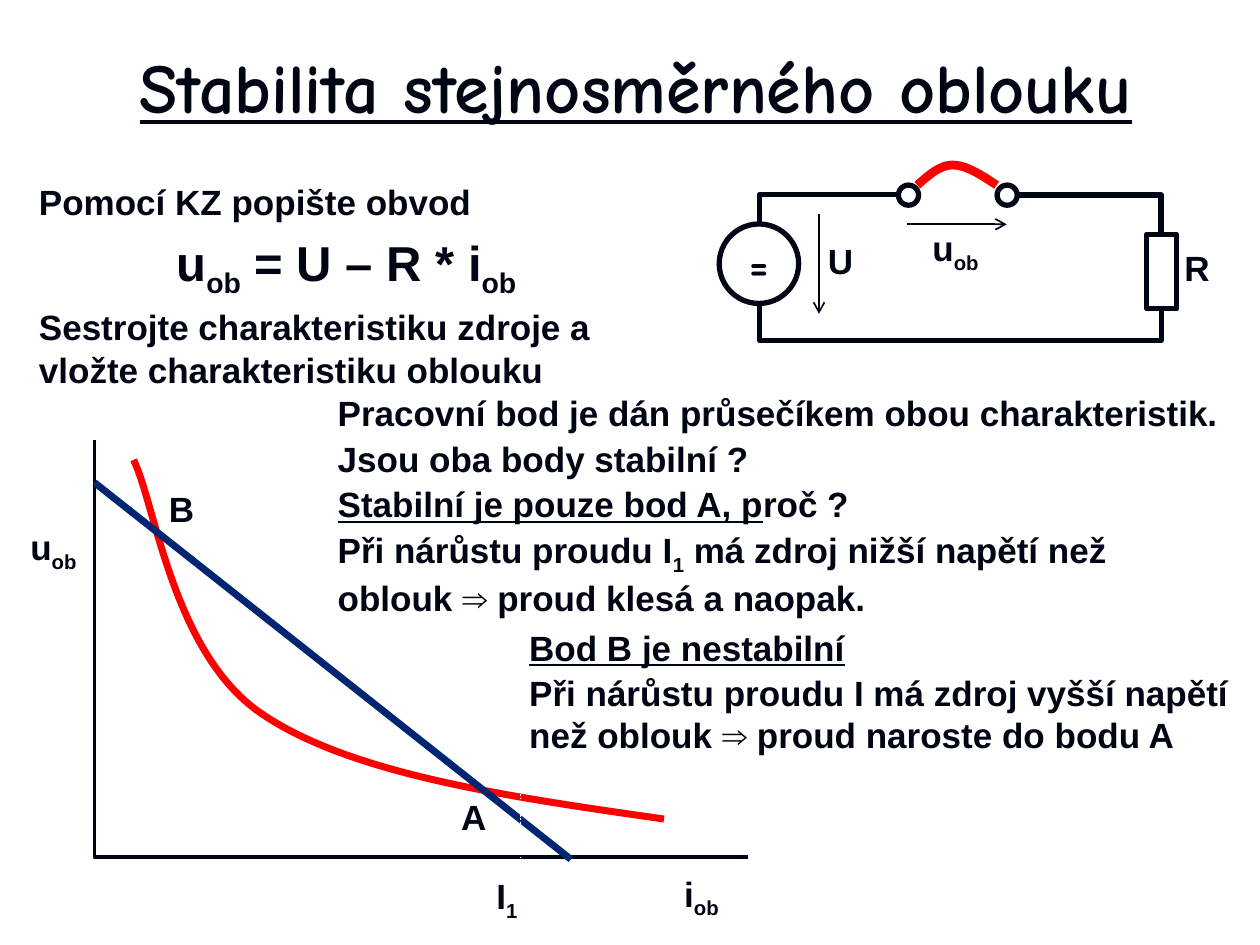
from lxml.etree import SubElement
from pptx import Presentation
from pptx.dml.color import RGBColor
from pptx.enum.dml import MSO_LINE
from pptx.enum.shapes import MSO_CONNECTOR, MSO_SHAPE
from pptx.enum.text import MSO_ANCHOR, MSO_AUTO_SIZE, PP_ALIGN
from pptx.oxml.ns import qn
from pptx.util import Pt

COLORS = {"ink": "000514", "arc": "FF0000", "source": "002673", "paper": "FFFFFF"}
BODY_FONT, TITLE_FONT = "Arial", "Comic Neue"


def style_line(line, color, width):
    """Set the colour and width of a line."""
    line.color.rgb = RGBColor.from_string(COLORS[color])
    line.width = Pt(width)


def add_run(paragraph, text, style="", size=20, font=BODY_FONT):
    """Add a bold run, optionally underlined or subscript."""
    run = paragraph.add_run()
    run.text = text
    run.font.name, run.font.size, run.font.bold = font, Pt(size), True
    run.font.color.rgb = RGBColor.from_string(COLORS["ink"])
    if style == "underline":
        run.font.underline = True
    if style == "sub":
        run.font._element.set("baseline", "-25000")


def add_text(shapes, box, paragraphs, spacing=0, wrap=True):
    """Add a text box; each paragraph is a list of (text, style) runs."""
    frame = shapes.add_textbox(*map(Pt, box)).text_frame
    frame.word_wrap = wrap
    frame.auto_size = MSO_AUTO_SIZE.SHAPE_TO_FIT_TEXT
    frame.margin_left = frame.margin_right = Pt(2.9)
    frame.margin_top = frame.margin_bottom = Pt(2.9)
    for index, runs in enumerate(paragraphs):
        paragraph = frame.add_paragraph() if index else frame.paragraphs[0]
        if index:
            paragraph.space_before = Pt(spacing)
        for run in runs:
            add_run(paragraph, *run)
    return frame


def add_outline(shapes, preset, box):
    """Add an unfilled circuit symbol."""
    symbol = shapes.add_shape(preset, *map(Pt, box))
    symbol.shadow.inherit = False
    symbol.fill.background()
    style_line(symbol.line, "ink", 3)
    return symbol


def add_line(shapes, start, end, color="ink", width=1, arrow=False, kind=MSO_CONNECTOR.STRAIGHT):
    """Add a connector without a shadow, with an optional open arrowhead."""
    connector = shapes.add_connector(kind, *map(Pt, (*start, *end)))
    style_line(connector.line, color, width)
    if arrow:
        SubElement(connector.line._get_or_add_ln(), qn("a:tailEnd"), type="arrow")
    SubElement(connector._element.spPr, qn("a:effectLst"))
    return connector


def add_wire(shapes, start, end, upright=False, detour=None):
    """Add a bent wire; an upright one leaves its start vertically."""
    if upright:
        center_x, center_y = (start[0] + end[0]) / 2, (start[1] + end[1]) / 2
        half_w, half_h = (start[1] - end[1]) / 2, (end[0] - start[0]) / 2
        start = center_x - half_w, center_y - half_h
        end = center_x + half_w, center_y + half_h
    wire = add_line(shapes, start, end, width=3, kind=MSO_CONNECTOR.ELBOW)
    properties = wire._element.spPr
    if upright:
        properties.find(qn("a:xfrm")).set("rot", "16200000")
    geometry = properties.find(qn("a:prstGeom"))
    if detour is None:
        geometry.set("prst", "bentConnector2")
    else:
        adjustments = geometry.find(qn("a:avLst"))
        SubElement(adjustments, qn("a:gd"), name="adj1", fmla=f"val {detour * 100000}")


def add_path(shapes, points, color, width, curved=False):
    """Add an open path; a curved one reads points as Bézier triples."""
    start, *rest = [(Pt(x), Pt(y)) for x, y in points]
    builder = shapes.build_freeform(*start)
    builder.add_line_segments(rest, close=False)
    path = builder.convert_to_shape()
    path.shadow.inherit = False
    path.fill.background()
    style_line(path.line, color, width)
    if curved:
        segments = list(path._element.iter(qn("a:lnTo")))
        for index in range(0, len(segments), 3):
            triple = segments[index:index + 3]
            curve = SubElement(triple[0].getparent(), qn("a:cubicBezTo"))
            for segment in triple:
                curve.append(segment[0])
                segment.getparent().remove(segment)


def place_title(slide, box):
    """Fill and position the title placeholder."""
    title = slide.shapes.title
    title.left, title.top, title.width, title.height = map(Pt, box)
    title.text_frame.vertical_anchor = MSO_ANCHOR.MIDDLE
    paragraph = title.text_frame.paragraphs[0]
    paragraph.alignment = PP_ALIGN.CENTER
    add_run(paragraph, "Stabilita stejnosměrného oblouku", "underline", 40, TITLE_FONT)


def place_task(slide, box):
    """Place the assignment with the circuit equation."""
    equation = [("u", "", 28), ("ob", "sub", 28), (" = U – R * i", "", 28), ("ob", "sub", 28)]
    frame = add_text(slide.shapes, box, [
        [("Pomocí KZ popište obvod",)],
        equation,
        [("Sestrojte charakteristiku zdroje a vložte charakteristiku oblouku",)],
    ], spacing=4)
    frame.paragraphs[1].alignment = PP_ALIGN.CENTER
    frame.paragraphs[1].space_before = Pt(5.6)


def place_circuit(slide, left, top):
    """Draw the circuit with source, arc and resistor."""
    shapes = slide.shapes.add_group_shape().shapes

    def at(x, y, *size):
        return (left + x, top + y, *size)

    source = add_outline(shapes, MSO_SHAPE.OVAL, at(0, 34, 45.4, 45.4))
    source.text_frame.word_wrap = False
    source.text_frame.vertical_anchor = MSO_ANCHOR.MIDDLE
    sign = source.text_frame.paragraphs[0]
    sign.alignment = PP_ALIGN.CENTER
    add_run(sign, "=", size=24, font=TITLE_FONT)
    add_outline(shapes, MSO_SHAPE.RECTANGLE, at(244.2, 40, 17.3, 42.5))
    for x in (102.4, 158.8):
        add_outline(shapes, MSO_SHAPE.OVAL, at(x, 11.8, 11.5, 11.5))
    add_wire(shapes, at(23, 32.7), at(100.9, 17.2), upright=True)
    add_wire(shapes, at(171.5, 17.4), at(252.5, 38.5))
    add_wire(shapes, at(252.5, 83.6), at(23, 80.8), upright=True, detour=-6)
    add_text(shapes, at(59.2, 39.9, 20.2, 29.5), [[("U",)]])
    add_text(shapes, at(262.9, 44.2, 20.2, 29.5), [[("R",)]])
    arc = [(113.2, 11.8), (119.6, 6.1), (126.1, 0.3), (133.3, 0.3),
           (141.2, 0.3), (149.9, 6.1), (158.5, 11.8)]
    add_path(shapes, [at(*point) for point in arc], "arc", 5, curved=True)
    add_line(shapes, at(107.4, 34.2), at(164.3, 34.2), arrow=True)
    add_text(shapes, at(118.9, 32.7, 45.4, 29.5), [[("u",), ("ob", "sub")]])
    add_line(shapes, at(57, 28.4), at(57, 85.3), arrow=True)


def place_diagram(slide, left, top):
    """Draw the arc and source characteristics with labelled points."""
    shapes = slide.shapes.add_group_shape().shapes

    def at(x, y, *size):
        return (left + x, top + y, *size)

    axes = [(0, 0.3), (0, 238.6), (373.7, 238.6)]
    arc = [(22.3, 11.8), (34.6, 36.3), (44.6, 122), (95, 156.5),
           (145.4, 191.1), (234, 204), (325.4, 217)]
    add_path(shapes, [at(*point) for point in axes], "ink", 2)
    add_path(shapes, [at(*point) for point in arc], "arc", 4, curved=True)
    add_line(shapes, at(0, 24.8), at(272.2, 240), "source", 4)
    working_current = add_line(shapes, at(243.4, 188.9), at(243.4, 263.1), "paper")
    working_current.line.dash_style = MSO_LINE.ROUND_DOT
    labels = [
        ((-39.6, 46.4, 34.6, 30.2), [("u",), ("ob", "sub")]),
        ((334.1, 244.4, 27.4, 30.2), [("i",), ("ob", "sub")]),
        ((206.6, 200.4, 20.2, 29.5), [("A",)]),
        ((39.6, 24.8, 20.2, 29.5), [("B",)]),
        ((226.8, 245.8, 18.7, 30.2), [("I",), ("1", "sub")]),
    ]
    for box, runs in labels:
        add_text(shapes, at(*box), [runs], wrap=False)


def place_conclusions(slide, stable_box, unstable_box):
    """Place the explanations for points A and B."""
    add_text(slide.shapes, stable_box, [
        [("Pracovní bod je dán průsečíkem obou charakteristik.",)],
        [("Jsou oba body stabilní ?",)],
        [("Stabilní je pouze bod A, p", "underline"), ("roč ?",)],
        [("Při nárůstu proudu I",), ("1", "sub"),
         (" má zdroj nižší napětí než oblouk ⇒ proud klesá a naopak.",)],
    ], spacing=2)
    add_text(slide.shapes, unstable_box, [
        [("Bod B je nestabilní", "underline")],
        [("Při nárůstu proudu I má zdroj vyšší napětí než oblouk ⇒ proud naroste do bodu A",)],
    ], spacing=2)


def main():
    """Build and save the slide."""
    deck = Presentation()
    deck.slide_width, deck.slide_height = Pt(720), Pt(540)
    slide = deck.slides.add_slide(deck.slide_layouts[5])
    place_title(slide, (14.4, 14.4, 697.7, 68.4))
    place_task(slide, (19.4, 100.1, 357.1, 123.8))
    place_circuit(slide, 411, 94)
    place_diagram(slide, 54, 251)
    place_conclusions(slide, (190.1, 221, 516.2, 133.9), (299.5, 355, 406.8, 80.6))
    deck.save("out.pptx")


if __name__ == "__main__":
    main()
